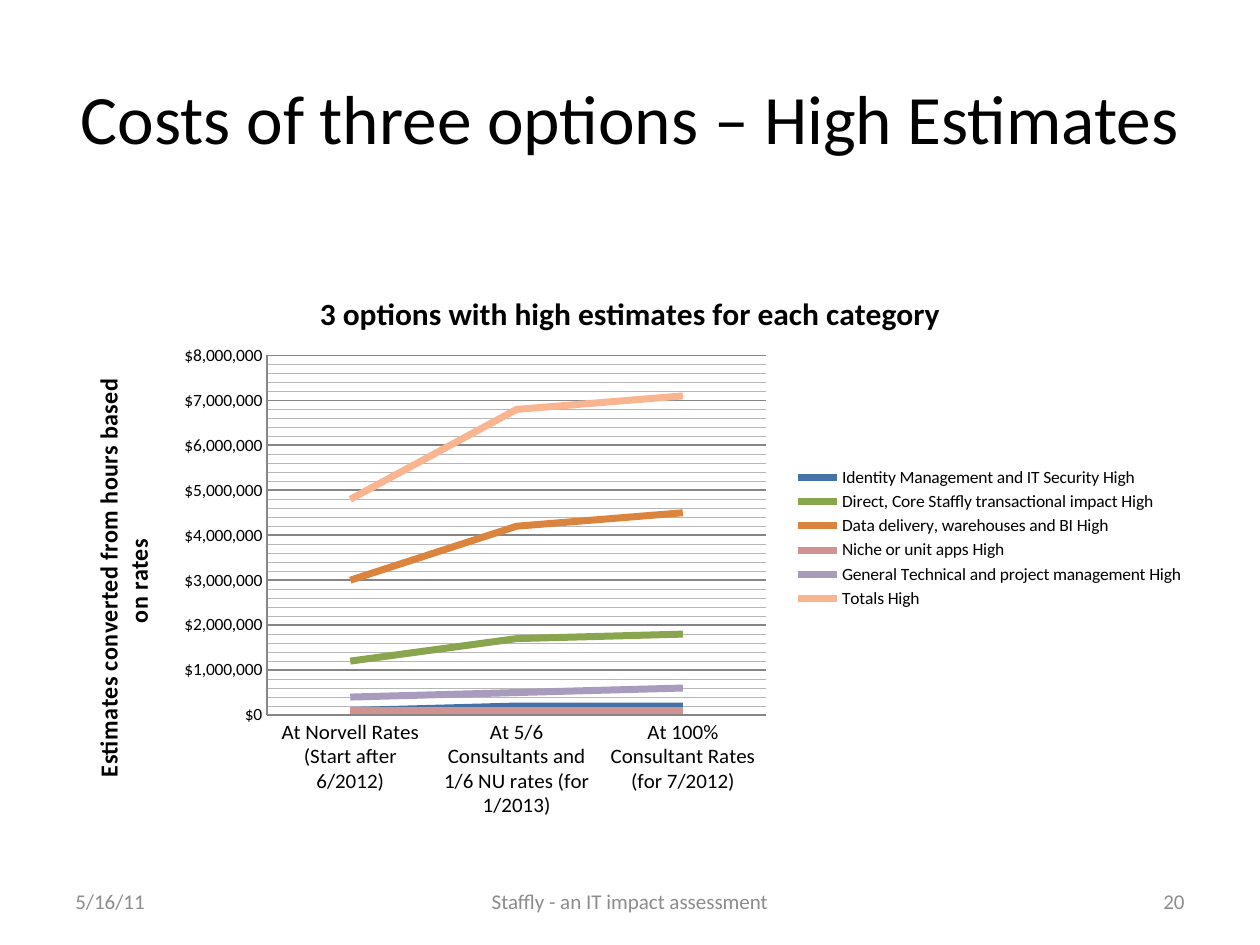
from dataclasses import dataclass

from lxml import etree
from pptx import Presentation
from pptx.chart.data import CategoryChartData
from pptx.dml.color import RGBColor
from pptx.enum.chart import XL_CHART_TYPE, XL_LEGEND_POSITION, XL_TICK_MARK
from pptx.enum.text import MSO_ANCHOR, PP_ALIGN
from pptx.oxml.ns import qn
from pptx.util import Inches, Pt

LINE = XL_CHART_TYPE.LINE
LEGEND_RIGHT = XL_LEGEND_POSITION.RIGHT
NO_TICK = XL_TICK_MARK.NONE
MIDDLE = MSO_ANCHOR.MIDDLE
LEFT, CENTER, RIGHT = PP_ALIGN.LEFT, PP_ALIGN.CENTER, PP_ALIGN.RIGHT


@dataclass(frozen=True)
class Theme:
    font: str = "Calibri"
    text: str = "000000"
    muted: str = "8C8C8C"
    axis: str = "868686"
    minor_grid: str = "B7B7B7"
    title_size: float = 39.6
    chart_title_size: float = 18
    axis_title_size: float = 14
    label_size: float = 12
    small_size: float = 10
    series_width: float = 4


THEME = Theme()

CATEGORIES = [
    "At Norvell Rates (Start after 6/2012)",
    "At 5/6 Consultants and 1/6 NU rates (for 1/2013)",
    "At 100% Consultant Rates (for 7/2012)",
]
# Series name, line colour, cost per option
SERIES = [
    ("Identity Management and IT Security High", "4572A7", (100000, 200000, 200000)),
    ("Direct, Core Staffly transactional impact High", "89A54E", (1200000, 1700000, 1800000)),
    ("Data delivery, warehouses and BI High", "DB843D", (3000000, 4200000, 4500000)),
    ("Niche or unit apps High", "D19392", (100000, 100000, 100000)),
    ("General Technical and project management High", "A99BBD", (400000, 500000, 600000)),
    ("Totals High", "F9B590", (4800000, 6800000, 7100000)),
]


def style_font(font, size, color=THEME.text, bold=False):
    values = {"name": THEME.font, "size": Pt(size), "bold": bold}
    for name, value in values.items():
        setattr(font, name, value)
    font.color.rgb = RGBColor.from_string(color)


def style_line(line, color, width):
    line.color.rgb = RGBColor.from_string(color)
    line.width = Pt(width)


def add_text(slide, box, text, size, color, align):
    tf = slide.shapes.add_textbox(*box).text_frame
    tf.word_wrap = True
    tf.vertical_anchor = MIDDLE
    p = tf.paragraphs[0]
    p.alignment = align
    r = p.add_run()
    r.text = text
    style_font(r.font, size, color)


def set_title(target, text, size):
    tf = target.text_frame
    tf.text = text
    style_font(tf.paragraphs[0].runs[0].font, size, bold=True)


def place_plot(chart, x, y, w, h):
    """Fix the inner plot area, in fractions of the chart box."""
    plot_area = chart._chartSpace.chart.plotArea
    for old in plot_area.findall(qn("c:layout")):
        plot_area.remove(old)
    layout = etree.Element(qn("c:layout"))
    manual = etree.SubElement(layout, qn("c:manualLayout"))
    values = {"layoutTarget": "inner", "xMode": "edge", "yMode": "edge",
              "x": x, "y": y, "w": w, "h": h}
    for name, value in values.items():
        etree.SubElement(manual, qn(f"c:{name}")).set("val", str(value))
    plot_area.insert(0, layout)


def style_minor_grid(chart, color, width):
    """Minor gridlines have no public formatting, so write their line."""
    grid = next(chart._chartSpace.iter(qn("c:minorGridlines")))
    sp_pr = etree.SubElement(grid, qn("c:spPr"))
    ln = etree.SubElement(sp_pr, qn("a:ln"), w=str(Pt(width)))
    fill = etree.SubElement(ln, qn("a:solidFill"))
    etree.SubElement(fill, qn("a:srgbClr"), val=color)


def style_axes(chart):
    cat, val = chart.category_axis, chart.value_axis
    for axis, size in ((cat, THEME.label_size), (val, THEME.small_size)):
        axis.major_tick_mark = axis.minor_tick_mark = NO_TICK
        style_line(axis.format.line, THEME.axis, 0.75)
        style_font(axis.tick_labels.font, size)

    scale = {"minimum_scale": 0, "maximum_scale": 8000000,
             "major_unit": 1000000, "minor_unit": 200000,
             "has_major_gridlines": True, "has_minor_gridlines": True}
    for name, value in scale.items():
        setattr(val, name, value)
    style_line(val.major_gridlines.format.line, THEME.axis, 1)
    style_minor_grid(chart, THEME.minor_grid, 0.5)
    val.tick_labels.number_format = r"\$#,##0"
    val.tick_labels.number_format_is_linked = False
    set_title(val.axis_title, "Estimates converted from hours based on rates",
              THEME.axis_title_size)


def add_cost_chart(slide, box):
    data = CategoryChartData()
    data.categories = CATEGORIES
    for name, _, values in SERIES:
        data.add_series(name, values)
    chart = slide.shapes.add_chart(LINE, *box, data).chart
    style_font(chart.font, THEME.small_size)
    set_title(chart.chart_title, "3 options with high estimates for each category",
              THEME.chart_title_size)

    # Lines
    plot = chart.plots[0]
    plot.vary_by_categories = False
    for series, (_, color, _) in zip(plot.series, SERIES):
        series.smooth = False
        style_line(series.format.line, color, THEME.series_width)

    style_axes(chart)
    place_plot(chart, 0.18, 0.16, 0.44, 0.67)

    # Legend
    chart.has_legend = True
    chart.legend.position = LEGEND_RIGHT
    chart.legend.include_in_layout = False
    style_font(chart.legend.font, THEME.small_size)


def add_footer(slide, left, top, width, height):
    side, middle = Inches(2.33), Inches(3.17)
    parts = [
        (left, side, "5/16/11", LEFT),
        (left + (width - middle) // 2, middle, "Staffly - an IT impact assessment", CENTER),
        (left + width - side, side, "20", RIGHT),
    ]
    for x, w, text, align in parts:
        add_text(slide, (x, top, w, height), text, THEME.label_size, THEME.muted, align)


def main():
    prs = Presentation()
    prs.slide_width, prs.slide_height = Inches(10), Inches(7.5)
    slide = prs.slides.add_slide(prs.slide_layouts[6])
    left, width = Inches(0.5), Inches(9)

    add_text(slide, (left, Inches(0.3), width, Inches(1.25)),
             "Costs of three options – High Estimates",
             THEME.title_size, THEME.text, CENTER)
    add_cost_chart(slide, (left, Inches(2.14), width, Inches(4.35)))
    add_footer(slide, left, Inches(6.95), width, Inches(0.4))
    prs.save("out.pptx")


if __name__ == "__main__":
    main()
